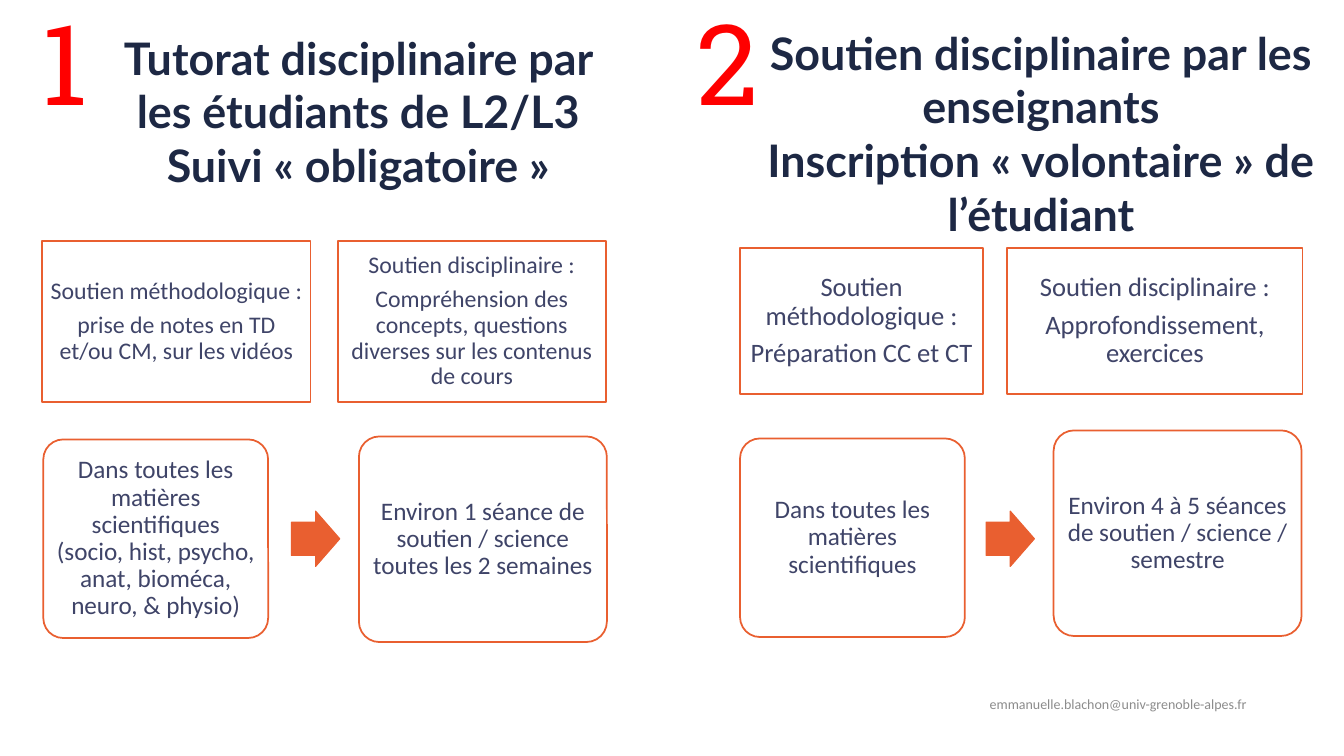
import pptx
import pptx.dml.color
import pptx.enum.shapes
import pptx.enum.text
import pptx.util

Inches, Pt = pptx.util.Inches, pptx.util.Pt
SHAPE = pptx.enum.shapes.MSO_SHAPE
ALIGN = pptx.enum.text.PP_ALIGN
ANCHOR = pptx.enum.text.MSO_ANCHOR


def color(hex_code):
    return pptx.dml.color.RGBColor.from_string(hex_code)


class SlideBuilder:
    ORANGE, WHITE, RED = "E95F30", "FFFFFF", "FF0000"
    NAVY, SLATE, GRAY = "1D2844", "3F4468", "8C8C8C"
    BODY, HEADING, NUMBER = "Calibri", "Lato", "Roboto Slab"

    def __init__(self, slide):
        self.s = slide

    def set_text(self, shape, lines, font, size, hex_code, align=ALIGN.CENTER,
                 anchor=ANCHOR.TOP, insets=(0.1, 0.05), bold=False,
                 spacing=1.0, after=0):
        """Fill a shape with one paragraph per line; insets are (sides, top and bottom)."""
        tf = shape.text_frame
        tf.word_wrap = True
        tf.auto_size = pptx.enum.text.MSO_AUTO_SIZE.NONE
        tf.vertical_anchor = anchor
        tf.margin_left = tf.margin_right = Inches(insets[0])
        tf.margin_top = tf.margin_bottom = Inches(insets[1])
        for i, line in enumerate(lines):
            p = tf.paragraphs[0] if i == 0 else tf.add_paragraph()
            p.text = line
            p.alignment = align
            p.line_spacing = spacing
            p.space_before, p.space_after = Pt(0), Pt(after)
            p.font.name, p.font.size, p.font.bold = font, Pt(size), bold
            p.font.color.rgb = color(hex_code)

    def heading(self, placeholder, box, lines):
        placeholder.left, placeholder.top, placeholder.width, placeholder.height = map(Inches, box)
        self.set_text(placeholder, lines, self.HEADING, 32, self.NAVY,
                      insets=(0.05, 0.02), bold=True)

    def label(self, box, text, font, size, hex_code, **style):
        sp = self.s.shapes.add_textbox(*map(Inches, box))
        self.set_text(sp, [text], font, size, hex_code, **style)

    def shape(self, kind, box, fill, line_width, adjustments=()):
        sp = self.s.shapes.add_shape(kind, *map(Inches, box))
        for i, value in enumerate(adjustments):
            sp.adjustments[i] = value
        sp.shadow.inherit = False
        sp.fill.solid()
        sp.fill.fore_color.rgb = color(fill)
        sp.line.color.rgb = color(self.ORANGE)
        sp.line.width = Pt(line_width)
        return sp

    def card(self, box, lines, size, rounded=False):
        if rounded:
            sp = self.shape(SHAPE.ROUNDED_RECTANGLE, box, self.WHITE, 1.25, [0.1])
        else:
            sp = self.shape(SHAPE.RECTANGLE, box, self.WHITE, 1.25)
        self.set_text(sp, lines, self.BODY, size, self.SLATE, anchor=ANCHOR.MIDDLE,
                      insets=(0.07, 0.07), spacing=0.9, after=round(0.35 * size, 1))

    def arrow(self, left):
        self.shape(SHAPE.RIGHT_ARROW, (left, 5.07, 0.48, 0.55), self.ORANGE, 0.75, [0.6, 0.5])


def main():
    prs = pptx.Presentation()
    prs.slide_width, prs.slide_height = Inches(13.33), Inches(7.5)
    s = prs.slides.add_slide(prs.slide_layouts.get_by_name("Comparison"))
    holders = {ph.placeholder_format.idx: ph for ph in s.placeholders}
    b = SlideBuilder(s)

    b.heading(holders.pop(0), (1.05, 0.28, 5.01, 1.66),
              ["Tutorat disciplinaire par les étudiants de L2/L3",
               "Suivi « obligatoire »"])
    b.heading(holders.pop(3), (7.53, 0.23, 5.59, 2.2),
              ["Soutien disciplinaire par les enseignants",
               "Inscription « volontaire » de l’étudiant"])
    for unused in holders.values():
        unused.element.getparent().remove(unused.element)

    for number, left in (("1", 0.31), ("2", 6.81)):
        b.label((left, -0.11, 1.06, 1.45), number, b.NUMBER, 80, b.RED, align=ALIGN.LEFT)

    support, subject = "Soutien méthodologique :", "Soutien disciplinaire :"
    b.card((0.42, 2.39, 2.66, 1.6),
           [support, "prise de notes en TD et/ou CM, sur les vidéos"], 17)
    b.card((3.35, 2.39, 2.66, 1.6),
           [subject, "Compréhension des concepts, questions diverses sur les contenus de cours"], 17)
    b.card((7.34, 2.46, 2.41, 1.45), [support, "Préparation CC et CT"], 19)
    b.card((9.99, 2.46, 2.93, 1.45), [subject, "Approfondissement, exercices"], 19)

    sciences = "Dans toutes les matières scientifiques"
    b.card((0.43, 4.36, 2.23, 1.97),
           [sciences + " (socio, hist, psycho, anat, bioméca, neuro, & physio)"], 18, rounded=True)
    b.card((3.56, 4.33, 2.46, 2.04),
           ["Environ 1 séance de soutien / science toutes les 2 semaines"], 18, rounded=True)
    b.card((7.34, 4.35, 2.23, 1.97), [sciences], 18, rounded=True)
    b.card((10.45, 4.27, 2.46, 2.04),
           ["Environ 4 à 5 séances de soutien / science / semestre"], 18, rounded=True)
    for left in (2.89, 9.78):
        b.arrow(left)

    b.label((0.88, 6.81, 11.58, 0.35), "emmanuelle.blachon@univ-grenoble-alpes.fr",
            b.BODY, 10, b.GRAY, align=ALIGN.RIGHT, anchor=ANCHOR.MIDDLE)
    prs.save("out.pptx")


if __name__ == "__main__":
    main()
